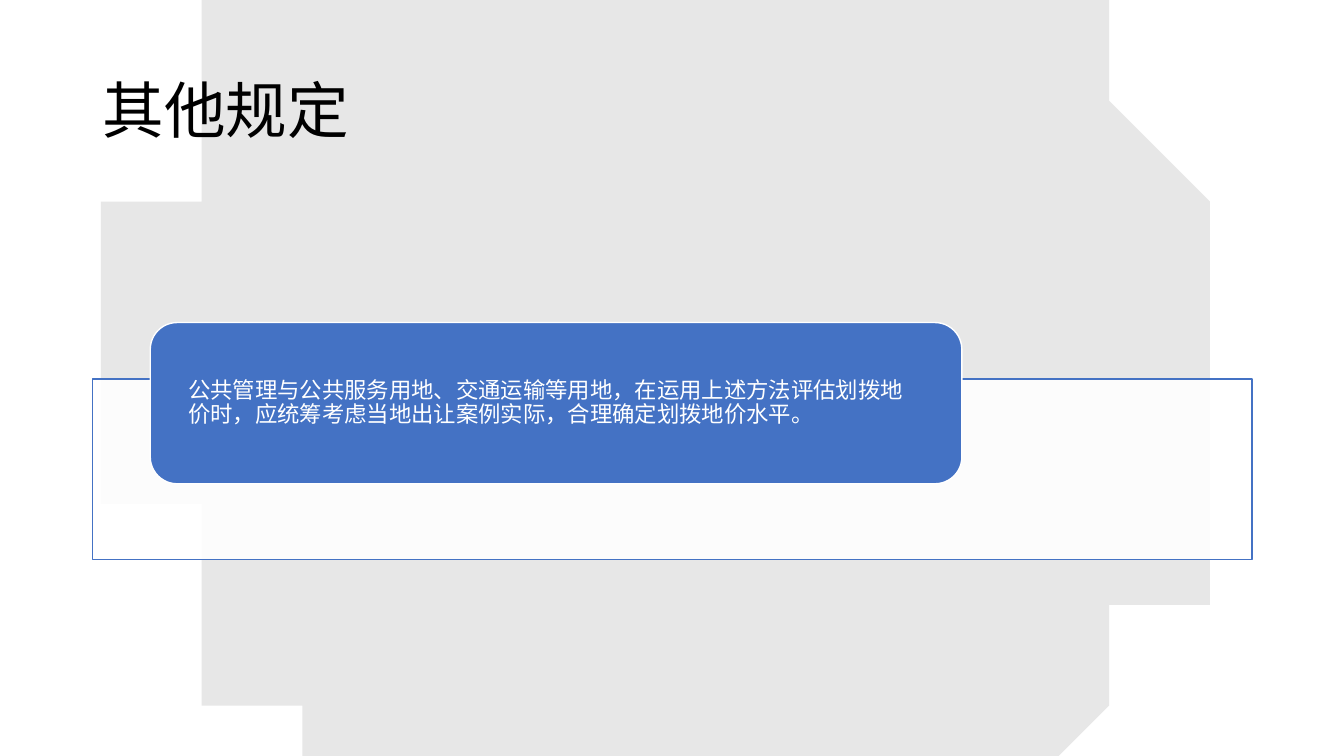
from math import asin, cos, pi, sin

from lxml import etree
from pptx import Presentation
from pptx.dml.color import RGBColor
from pptx.enum.shapes import MSO_SHAPE
from pptx.enum.text import MSO_ANCHOR, PP_ALIGN
from pptx.oxml.ns import qn
from pptx.util import Inches, Pt

RECT, ROUND = MSO_SHAPE.RECTANGLE, MSO_SHAPE.ROUNDED_RECTANGLE
MIDDLE, LEFT = MSO_ANCHOR.MIDDLE, PP_ALIGN.LEFT
WIDE, HIGH = 13.33, 7.5
COLORS = {"black": "000000", "white": "FFFFFF", "blue": "4472C4", "gray": "D9D9D9"}


class Deck:
    font = "Noto Sans CJK SC"

    def __init__(self):
        self.prs = Presentation()
        self.prs.slide_width, self.prs.slide_height = Inches(WIDE), Inches(HIGH)
        self.slide = self.prs.slides.add_slide(self.prs.slide_layouts[6])

    def color(self, name):
        return RGBColor.from_string(COLORS[name])

    def paint(self, shape, fill, line=None, alpha=100):
        shape.shadow.inherit = False
        shape.fill.solid()
        shape.fill.fore_color.rgb = self.color(fill)
        if alpha < 100:
            tone = shape.element.spPr.find(qn("a:solidFill"))[0]
            etree.SubElement(tone, qn("a:alpha"), val=str(alpha * 1000))
        if line:
            shape.line.color.rgb = self.color(line)
            shape.line.width = Pt(1)
        else:
            shape.line.fill.background()

    def disc(self, radius, fill, alpha):
        """Centred circle, cut off at the top and bottom of the slide."""
        x, y, steps = WIDE / 2, HIGH / 2, 60
        edge = asin(y / radius)
        turns = [edge * (2 * i / steps - 1) for i in range(steps + 1)]
        turns += [pi + t for t in turns]
        dots = [(x + radius * cos(t), y + radius * sin(t)) for t in turns]
        form = self.slide.shapes.build_freeform(*dots[0], scale=Inches(1))
        form.add_line_segments(dots[1:], close=True)
        self.paint(form.convert_to_shape(), fill, alpha=alpha)

    def box(self, kind, at, fill, line, alpha=100):
        shape = self.slide.shapes.add_shape(kind, *map(Inches, at))
        self.paint(shape, fill, line, alpha)
        return shape

    def label(self, shape, text, size, color, pad):
        frame = shape.text_frame
        frame.word_wrap = True
        frame.vertical_anchor = MIDDLE
        frame.margin_left = frame.margin_right = Inches(pad)
        para = frame.paragraphs[0]
        para.text = text
        para.alignment = LEFT
        para.line_spacing = 0.9
        para.font.size = Pt(size)
        para.font.color.rgb = self.color(color)
        para.font.name = self.font
        # East Asian typeface
        base = para._p.pPr.find(qn("a:defRPr"))
        etree.SubElement(base, qn("a:ea"), typeface=self.font)

    def title(self, at, text):
        shape = self.slide.shapes.add_textbox(*map(Inches, at))
        self.label(shape, text, 44, "black", 0.1)


def main():
    deck = Deck()

    # Backdrop and title
    deck.disc(5.345, "gray", 62)
    deck.title((0.92, 0.4, 11.5, 1.45), "其他规定")

    # Frame with the rule on top
    deck.box(RECT, (0.92, 3.76, 11.5, 1.79), "white", "blue", 90)
    rule = deck.box(ROUND, (1.49, 3.2, 8.05, 1.6), "blue", "white")
    deck.label(rule, "公共管理与公共服务用地、交通运输等用地，在运用上述方法评估划拨地价时，"
               "应统筹考虑当地出让案例实际，合理确定划拨地价水平。", 16, "white", 0.3)

    deck.prs.save("out.pptx")


if __name__ == "__main__":
    main()
